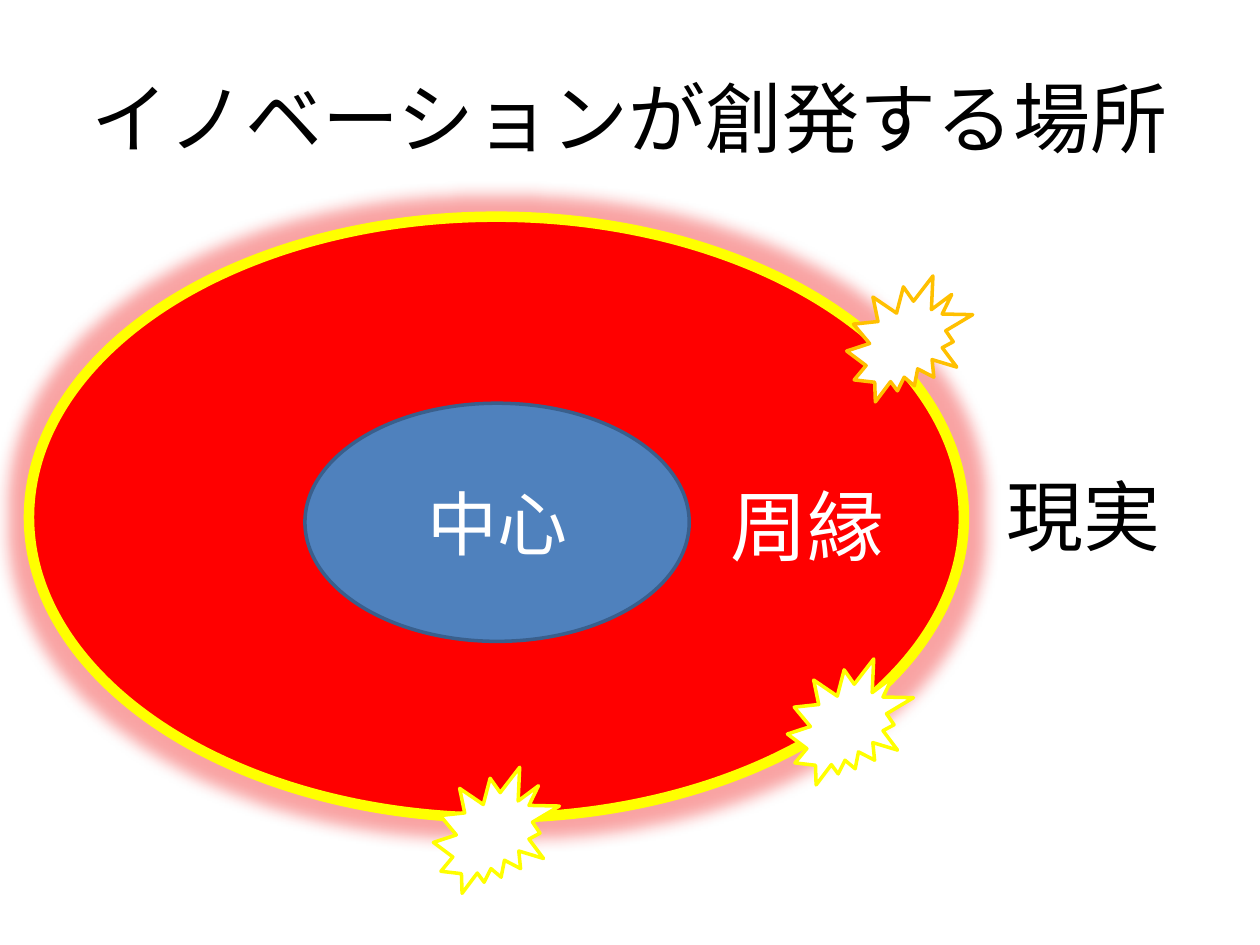
import pptx
import pptx.dml.color
import pptx.enum.shapes
import pptx.enum.text
import pptx.oxml
import pptx.oxml.ns
import pptx.util

Inches = pptx.util.Inches
KIND = pptx.enum.shapes.MSO_SHAPE
ALIGN = pptx.enum.text.PP_ALIGN
ANCHOR = pptx.enum.text.MSO_ANCHOR
GLOW = (
    '<a:glow %s rad="228600"><a:srgbClr val="F01A1A">'
    '<a:alpha val="40000"/></a:srgbClr></a:glow>' % pptx.oxml.ns.nsdecls("a")
)


def color(code):
    return pptx.dml.color.RGBColor.from_string(code)


def place(box, part):
    return [Inches(n) for n in (box[0] + part[0], box[1] + part[1], *part[2:])]


def write(shape, words, size, code, align=ALIGN.LEFT, anchor=ANCHOR.TOP):
    frame = shape.text_frame
    for name, value in {"word_wrap": True, "vertical_anchor": anchor}.items():
        setattr(frame, name, value)
    line = frame.paragraphs[0]
    line.alignment = align
    run = line.add_run()
    run.text = words
    form = {"size": pptx.util.Pt(size), "name": "Calibri"}
    for name, value in form.items():
        setattr(run.font, name, value)
    run.font.color.rgb = color(code)


def label(slide, box, part, words, code, **form):
    shape = slide.shapes.add_textbox(*place(box, part))
    write(shape, words, 44, code, **form)


def draw(slide, box, part, kind, fill, edge, width):
    shape = slide.shapes.add_shape(kind, *place(box, part))
    shape.shadow.inherit = False
    shape.fill.solid()
    shape.fill.fore_color.rgb = color(fill)
    shape.line.color.rgb = color(edge)
    shape.line.width = pptx.util.Pt(width)
    return shape


def title(slide, box):
    label(slide, box, (0, 0, *box[2:]), "イノベーションが創発する場所", "000000",
          align=ALIGN.CENTER, anchor=ANCHOR.MIDDLE)


def rings(slide, box):
    outer = draw(slide, box, (0, 0, *box[2:]), KIND.OVAL, "FF0000", "FFFF00", 6)
    effect = outer._element.spPr.find(pptx.oxml.ns.qn("a:effectLst"))
    effect.append(pptx.oxml.parse_xml(GLOW))
    inner = draw(slide, box, (2.19, 1.48, 3.05, 1.89), KIND.OVAL,
                 "4F81BD", "3A5F8C", 2)
    write(inner, "中心", 40, "FFFFFF", ALIGN.CENTER, ANCHOR.MIDDLE)
    label(slide, box, (5.47, 2.03, 1.48, 0.84), "周縁", "FFFFFF")
    label(slide, box, (7.66, 1.95, 2.11, 0.84), "現実", "000000")


def sparks(slide, box):
    spots = [(6.49, 0.47, "FFC000"), (6.02, 3.51, "FFFF00"), (3.21, 4.37, "FFFF00")]
    for left, top, edge in spots:
        draw(slide, box, (left, top, 1, 1), KIND.EXPLOSION2, "FFFFFF", edge, 2)


def main():
    deck = pptx.Presentation()
    for name, value in {"slide_width": 10, "slide_height": 7.5}.items():
        setattr(deck, name, Inches(value))
    slide = deck.slides.add_slide(deck.slide_layouts[6])
    field = (0.23, 1.72, 7.42, 4.77)
    title(slide, (0.5, 0.3, 9, 1.25))
    rings(slide, field)
    sparks(slide, field)
    deck.save("out.pptx")


if __name__ == "__main__":
    main()
